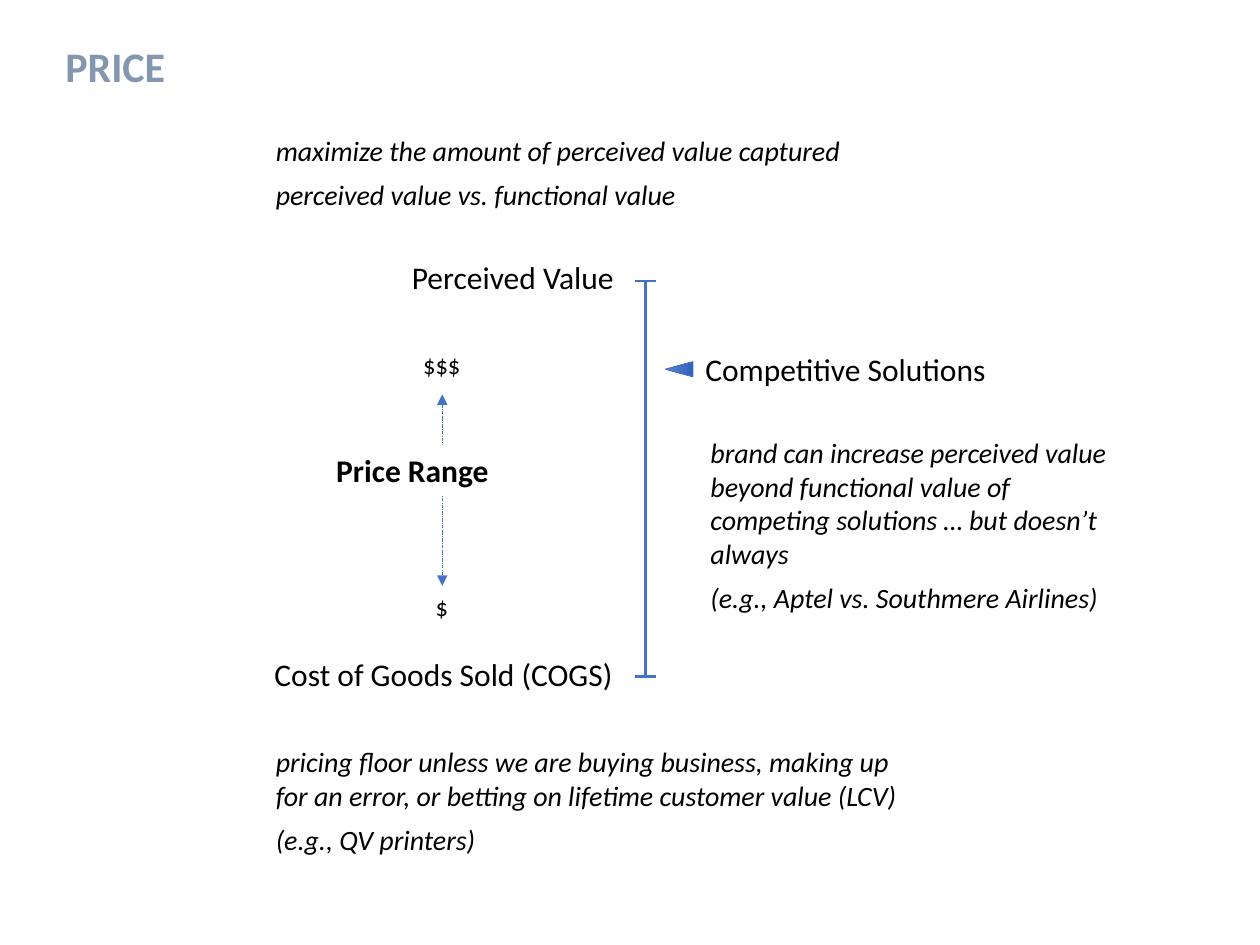
from lxml.etree import SubElement
from pptx import Presentation
from pptx.dml.color import RGBColor
from pptx.enum.dml import MSO_LINE
from pptx.enum.shapes import MSO_CONNECTOR, MSO_SHAPE
from pptx.enum.text import MSO_ANCHOR, MSO_AUTO_SIZE, PP_ALIGN
from pptx.oxml.ns import qn
from pptx.util import Inches, Pt

BLUE, BLACK, WHITE, TITLE = "4472C4", "000000", "FFFFFF", "8497B0"
LABEL = {"size": Pt(18)}
NOTE = {"size": Pt(16), "italic": True}
SYMBOL = {"size": Pt(14)}


def color(value):
    return RGBColor.from_string(value)


def inches(*lengths):
    return [Inches(length) for length in lengths]


def write(shape, lines, style, wrap=False, text_color=BLACK):
    frame = shape.text_frame
    settings = {"word_wrap": wrap, "auto_size": MSO_AUTO_SIZE.SHAPE_TO_FIT_TEXT,
                "vertical_anchor": MSO_ANCHOR.TOP}
    for name, value in settings.items():
        setattr(frame, name, value)
    for index, line in enumerate(lines):
        paragraph = frame.add_paragraph() if index else frame.paragraphs[0]
        paragraph.alignment = PP_ALIGN.LEFT
        if index:
            paragraph.space_before = Pt(6)
        run = paragraph.add_run()
        run.text = line
        for name, value in {"name": "Calibri", **style}.items():
            setattr(run.font, name, value)
        run.font.color.rgb = color(text_color)


def add_text(slide, box, lines, style, wrap=False, text_color=BLACK):
    write(slide.shapes.add_textbox(*inches(*box)), lines, style, wrap, text_color)


def add_masked_text(slide, box, text, style):
    shape = slide.shapes.add_shape(MSO_SHAPE.RECTANGLE, *inches(*box))
    shape.shadow.inherit = False
    shape.fill.solid()
    shape.fill.fore_color.rgb = color(WHITE)
    shape.line.fill.background()
    write(shape, [text], style)


def add_line(slide, start, end, width=1.5):
    connector = slide.shapes.add_connector(
        MSO_CONNECTOR.STRAIGHT, *inches(*start, *end))
    connector.line.color.rgb = color(BLUE)
    connector.line.width = Pt(width)
    SubElement(connector._element.spPr, qn("a:effectLst"))
    return connector


def add_value_scale(slide, left, top, width, height):
    middle = left + width / 2
    add_line(slide, (middle, top), (middle, top + height))
    for level in (top, top + height):
        add_line(slide, (left, level), (left + width, level))
    add_text(slide, (left - 1.87, top - 0.23, 1.82, 0.4), ["Perceived Value"], LABEL)
    add_text(slide, (left - 2.96, top + height - 0.22, 2.92, 0.4),
             ["Cost of Goods Sold (COGS)"], LABEL)


def add_competitors(slide, left, top, width, height):
    pointer = slide.shapes.add_shape(
        MSO_SHAPE.ISOSCELES_TRIANGLE, *inches(left + 0.05, top + 0.09, 0.12, 0.22))
    pointer.rotation = 270
    pointer.shadow.inherit = False
    pointer.fill.gradient()
    pointer.fill.gradient_angle = 270
    for stop, value in zip(pointer.fill.gradient_stops, ("6183CB", "3062BB")):
        stop.color.rgb = color(value)
    pointer.line.color.rgb = color(BLUE)
    pointer.line.width = Pt(0.5)
    add_text(slide, (left + 0.22, top, width - 0.22, height),
             ["Competitive Solutions"], LABEL)


def add_price_range(slide, left, top, width, height):
    center = left + 0.94
    arrow = add_line(slide, (center, top + 0.4), (center, top + height - 0.34), 0.25)
    arrow.line.dash_style = MSO_LINE.LONG_DASH_DOT
    for end in ("a:headEnd", "a:tailEnd"):
        SubElement(arrow.line._get_or_add_ln(), qn(end), type="triangle")
    add_masked_text(slide, (left, top + 0.8, width, 0.4), "Price Range",
                    {**LABEL, "bold": True})
    for text, symbol_width, symbol_top in (
            ("$$$", 0.5, top), ("$", 0.3, top + height - 0.34)):
        add_masked_text(slide, (center - symbol_width / 2, symbol_top, symbol_width, 0.34),
                        text, SYMBOL)


def add_notes(slide, left, top):
    notes = [
        ((left, top, 5.45, 0.72),
         ["maximize the amount of perceived value captured",
          "perceived value vs. functional value"]),
        ((left + 3.45, top + 2.4, 3.45, 1.53),
         ["brand can increase perceived value beyond functional value of "
          "competing solutions … but doesn’t always",
          "(e.g., Aptel vs. Southmere Airlines)"]),
        ((left, top + 4.85, 5.32, 0.99),
         ["pricing floor unless we are buying business, making up for an error, "
          "or betting on lifetime customer value (LCV)",
          "(e.g., QV printers)"]),
    ]
    for box, lines in notes:
        add_text(slide, box, lines, NOTE, wrap=True)


def main():
    presentation = Presentation()
    presentation.slide_width, presentation.slide_height = inches(10, 7.5)
    slide = presentation.slides.add_slide(presentation.slide_layouts[6])
    add_text(slide, (0.42, 0.27, 4.22, 0.5), ["PRICE"],
             {"size": Pt(24), "bold": True}, wrap=True, text_color=TITLE)
    add_value_scale(slide, 5.04, 2.23, 0.17, 3.14)
    add_competitors(slide, 5.28, 2.73, 2.68, 0.4)
    add_price_range(slide, 2.57, 2.73, 1.42, 2.26)
    add_notes(slide, 2.09, 1.01)
    presentation.save("out.pptx")


if __name__ == "__main__":
    main()
